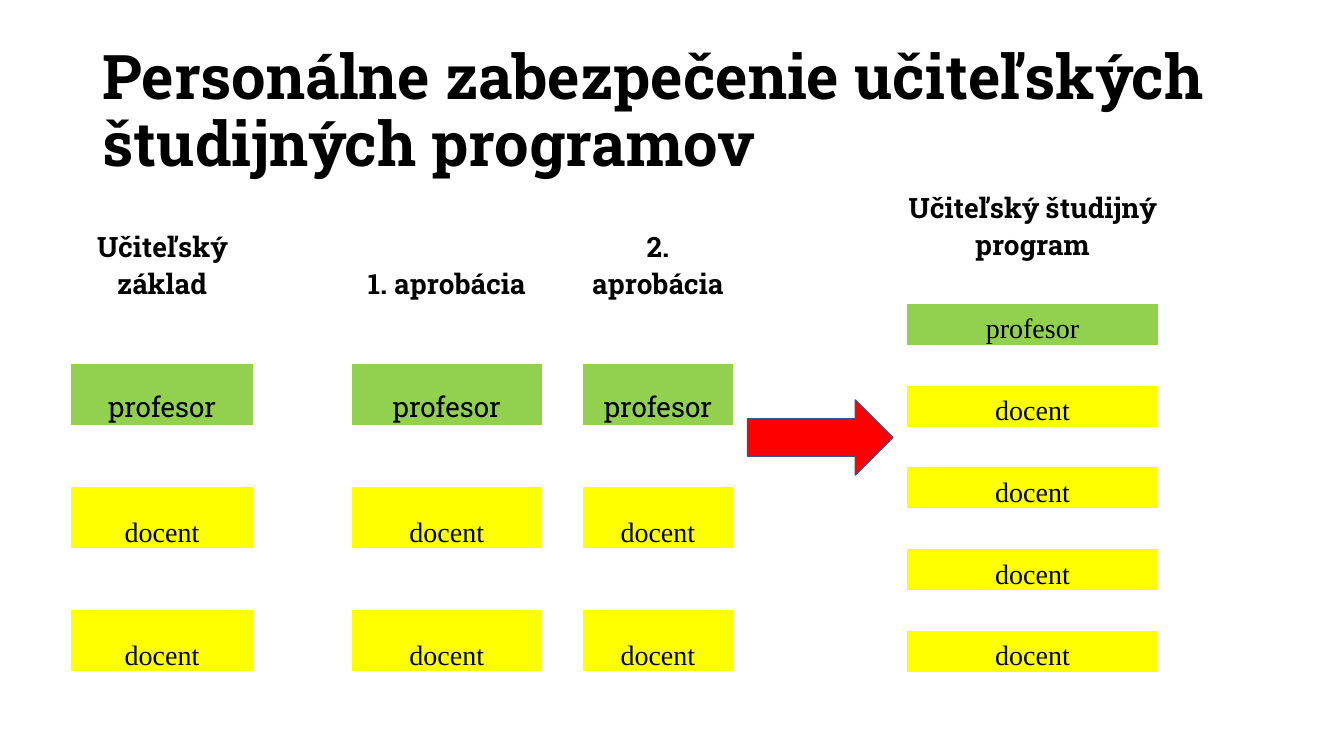
from dataclasses import dataclass

from pptx import Presentation
from pptx import util as u
from pptx.dml.color import RGBColor
from pptx.enum import shapes, text
from pptx.oxml.ns import qn
from pptx.slide import Slide


@dataclass(frozen=True)
class Theme:
    ink: str = "000000"
    professor: str = "92D050"
    docent: str = "FFFF00"
    arrow: str = "FF0000"
    arrow_line: str = "325491"
    slab: str = "Roboto Slab"
    serif: str = "Times New Roman"
    title_size: float = 44
    cell_size: float = 20
    plain_table: str = "{2D5ABB26-0587-4C30-8999-92F81FD0307C}"


THEME = Theme()


@dataclass(frozen=True)
class StaffTable:
    left: float
    top: float
    widths: tuple[float, ...]
    headings: tuple[str, ...]
    heading_height: float
    row_height: float
    professor_font: str
    docents: int


STAFF_TABLES = (
    StaffTable(1.8, 5.13, (4.57, 2.49, 4.8, 1.04, 3.76),
               ("Učiteľský základ", "1. aprobácia", "2. aprobácia"),
               2.49, 1.55, THEME.slab, 2),
    StaffTable(22.86, 4.75, (6.32,), ("Učiteľský študijný program",),
               1.88, 1.03, THEME.serif, 4),
)


def color(value: str) -> RGBColor:
    return RGBColor.from_string(value)


def write(frame, words: str, *, size: float, font: str, bold: bool = False,
          align=text.PP_ALIGN.LEFT, spacing: float = 1.0) -> None:
    para = frame.paragraphs[0]
    para.alignment = align
    para.line_spacing = spacing
    span = para.add_run()
    span.text = words
    span.font.size = u.Pt(size)
    span.font.name = font
    span.font.bold = bold
    span.font.color.rgb = color(THEME.ink)


def add_title(page: Slide, words: str) -> None:
    box = page.shapes.add_textbox(u.Cm(2.33), u.Cm(1.01), u.Cm(29.21), u.Cm(3.68))
    frame = box.text_frame
    frame.word_wrap = True
    frame.vertical_anchor = text.MSO_ANCHOR.MIDDLE
    write(frame, words, size=THEME.title_size, font=THEME.slab, bold=True, spacing=0.9)


def fill_cell(cell, words: str, *, font: str, bold: bool = False,
              fill: str | None = None) -> None:
    cell.vertical_anchor = text.MSO_ANCHOR.BOTTOM
    write(cell.text_frame, words, size=THEME.cell_size, font=font, bold=bold,
          align=text.PP_ALIGN.CENTER)
    if fill:
        cell.fill.solid()
        cell.fill.fore_color.rgb = color(fill)


def add_staff_table(page: Slide, staff: StaffTable) -> None:
    row_count = 1 + 2 * (1 + staff.docents)
    heights = [staff.heading_height] + [staff.row_height] * (row_count - 1)
    table = page.shapes.add_table(
        row_count, len(staff.widths), u.Cm(staff.left), u.Cm(staff.top),
        u.Cm(sum(staff.widths)), u.Cm(sum(heights))).table
    table.first_row = table.horz_banding = False
    table._tbl.tblPr.find(qn("a:tableStyleId")).text = THEME.plain_table
    for column, width in zip(table.columns, staff.widths):
        column.width = u.Cm(width)
    for row, height in zip(table.rows, heights):
        row.height = u.Cm(height)
    for cell in table.iter_cells():
        cell.margin_left = cell.margin_right = cell.margin_top = u.Cm(0.02)
        cell.margin_bottom = 0
        cell.fill.background()
    for index, heading in enumerate(staff.headings):
        column = 2 * index
        fill_cell(table.cell(0, column), heading, font=THEME.slab, bold=True)
        fill_cell(table.cell(2, column), "profesor", font=staff.professor_font,
                  fill=THEME.professor)
        for row in range(4, row_count, 2):
            fill_cell(table.cell(row, column), "docent", font=THEME.serif,
                      fill=THEME.docent)


def add_arrow(page: Slide) -> None:
    arrow = page.shapes.add_shape(shapes.MSO_SHAPE.RIGHT_ARROW, u.Cm(18.84),
                                  u.Cm(10.08), u.Cm(3.66), u.Cm(1.89))
    arrow.shadow.inherit = False
    arrow.fill.solid()
    arrow.fill.fore_color.rgb = color(THEME.arrow)
    arrow.line.color.rgb = color(THEME.arrow_line)
    arrow.line.width = u.Pt(1)


def main() -> None:
    deck = Presentation()
    deck.slide_width, deck.slide_height = u.Cm(33.87), u.Cm(19.05)
    page = deck.slides.add_slide(deck.slide_layouts[6])
    add_title(page, "Personálne zabezpečenie učiteľských študijných programov")
    for staff in STAFF_TABLES:
        add_staff_table(page, staff)
    add_arrow(page)
    deck.save("out.pptx")


if __name__ == "__main__":
    main()
